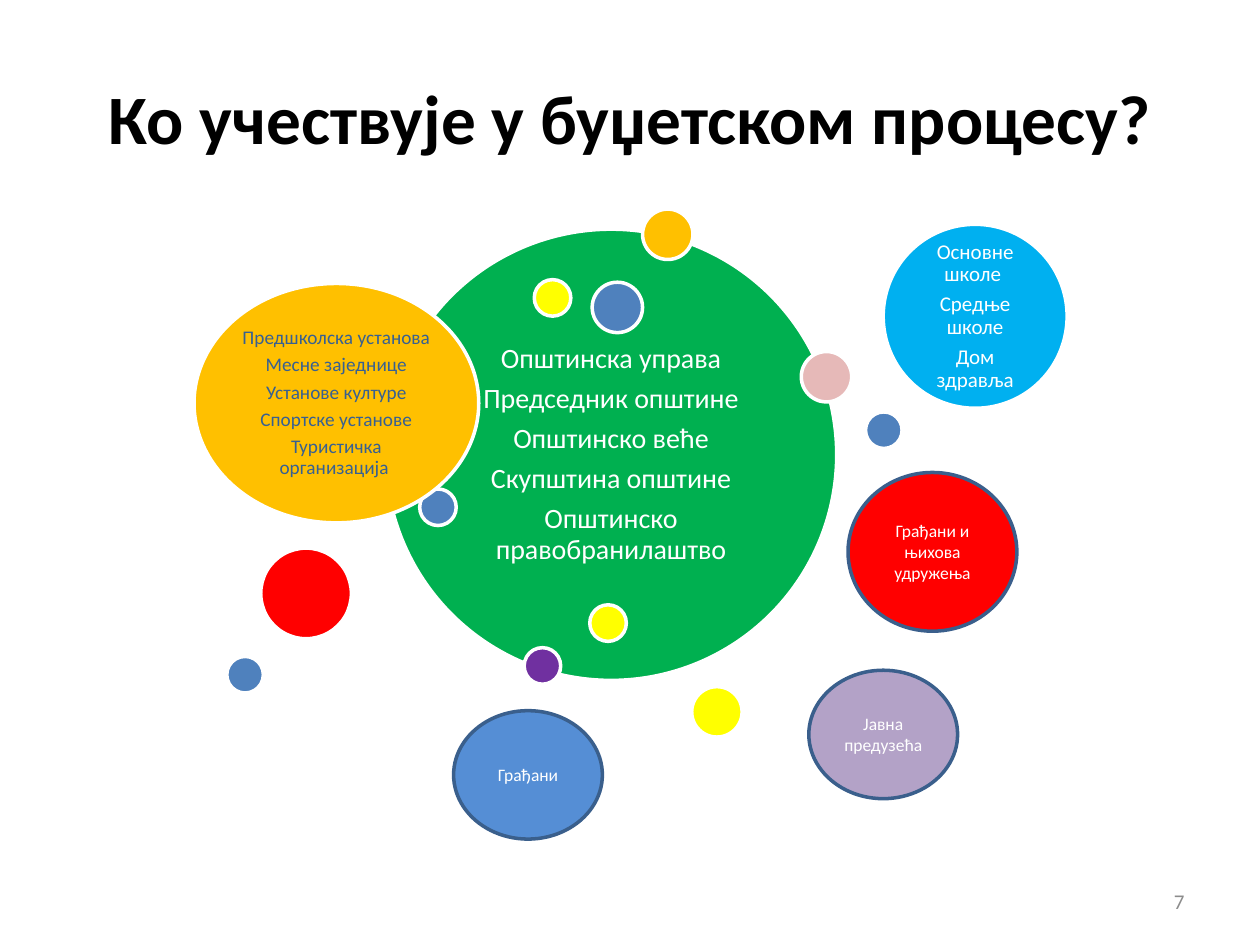
"""Build the slide showing who takes part in the municipal budget process."""
from dataclasses import dataclass

from pptx import Presentation
from pptx.dml.color import RGBColor
from pptx.enum.shapes import MSO_SHAPE
from pptx.enum.text import MSO_ANCHOR, MSO_AUTO_SIZE, PP_ALIGN
from pptx.slide import Slide
from pptx.text.text import TextFrame
from pptx.util import Pt

COLORS = {
    "black": "000000", "white": "FFFFFF", "gray": "8C8C8C",
    "green": "00B050", "orange": "FFC000", "purple": "7030A0",
    "blue": "4F81BD", "yellow": "FFFF00", "red": "FF0000",
    "sky": "00B0F0", "pink": "E6B9B8", "lilac": "B3A2C7",
    "light_blue": "558ED5", "navy": "376092", "outline": "3A5F8C",
}
SMALL, MEDIUM, LARGE = 20.9, 28.8, 51.8


@dataclass(frozen=True)
class Bubble:
    left: float
    top: float
    width: float
    height: float
    fill: str
    line: str = "white"
    lines: tuple[str, ...] = ()
    size: float = 10
    ink: str = "white"
    inset: tuple[float, float] = (7.2, 3.6)
    line_spacing: float = 1.0
    gap: float = 0


def dot(left: float, top: float, diameter: float, fill: str) -> Bubble:
    return Bubble(left, top, diameter, diameter, fill)


def group(left: float, top: float, width: float, height: float, fill: str,
          lines: tuple[str, ...], size: float, inset: float, ink: str = "white") -> Bubble:
    return Bubble(left, top, width, height, fill, "white", lines, size, ink,
                  (inset, inset), 0.9, 0.35 * size)


def outlined(left: float, top: float, width: float, height: float,
             fill: str, label: str) -> Bubble:
    return Bubble(left, top, width, height, fill, "outline", (label,))


BUBBLES = (
    group(220.3, 131, 257.8, 257.8, "green",
          ("Општинска управа", "Председник општине", "Општинско веће",
           "Скупштина општине", "Општинско правобранилаштво"), 16, 5),
    dot(367.2, 119.5, MEDIUM, "orange"),
    dot(299.5, 370.1, SMALL, "purple"),
    dot(494.6, 235.4, SMALL, "blue"),
    dot(395.3, 392.4, MEDIUM, "yellow"),
    dot(305.3, 159.8, SMALL, "yellow"),
    dot(239.8, 279.4, SMALL, "blue"),
    group(110.9, 162, 162.7, 136.8, "orange",
          ("Предшколска установа", "Месне заједнице", "Установе културе",
           "Спортске установе", "Туристичка организација "), 11, 3.6, "navy"),
    dot(338.4, 161.3, MEDIUM, "blue"),
    dot(149, 313.2, LARGE, "red"),
    group(504.7, 128.2, 105.1, 105.1, "sky",
          ("Основне школе ", "Средње школе", "Дом здравља"), 12, 3.6),
    dot(457.9, 200.9, MEDIUM, "pink"),
    dot(129.6, 375.1, SMALL, "blue"),
    dot(337, 345.6, SMALL, "yellow"),
    outlined(484.6, 270, 96.5, 90.7, "red", "Грађани и њихова удружења"),
    outlined(462.2, 383, 85, 73.4, "lilac", "Јавна предузећа"),
    outlined(259.2, 406.1, 85, 73.4, "light_blue", "Грађани"),
)


def color(name: str) -> RGBColor:
    return RGBColor.from_string(COLORS[name])


def format_text(frame: TextFrame, size: float, ink: str,
                align: PP_ALIGN = PP_ALIGN.CENTER, bold: bool = False) -> None:
    frame.word_wrap = True
    frame.auto_size = MSO_AUTO_SIZE.NONE
    frame.vertical_anchor = MSO_ANCHOR.MIDDLE
    for para in frame.paragraphs:
        para.alignment = align
        for span in para.runs:
            span.font.name = "Calibri"
            span.font.size = Pt(size)
            span.font.bold = bold
            span.font.color.rgb = color(ink)


def draw_bubble(page: Slide, bubble: Bubble) -> None:
    shape = page.shapes.add_shape(MSO_SHAPE.OVAL, Pt(bubble.left), Pt(bubble.top),
                                  Pt(bubble.width), Pt(bubble.height))
    shape.shadow.inherit = False
    shape.fill.solid()
    shape.fill.fore_color.rgb = color(bubble.fill)
    shape.line.color.rgb = color(bubble.line)
    shape.line.width = Pt(2)
    if not bubble.lines:
        return
    frame = shape.text_frame
    frame.text = "\n".join(bubble.lines)
    frame.margin_left = frame.margin_right = Pt(bubble.inset[0])
    frame.margin_top = frame.margin_bottom = Pt(bubble.inset[1])
    format_text(frame, bubble.size, bubble.ink)
    for para in frame.paragraphs:
        para.line_spacing = bubble.line_spacing
        para.space_after = Pt(bubble.gap)


def draw_title(page: Slide, text: str) -> None:
    title = page.shapes.title
    title.left, title.top, title.width, title.height = Pt(36), Pt(21.6), Pt(648), Pt(90)
    title.text_frame.text = text
    format_text(title.text_frame, 39.6, "black", bold=True)


def draw_page_number(page: Slide, number: str) -> None:
    box = page.shapes.add_textbox(Pt(516.2), Pt(500.4), Pt(167.8), Pt(28.8))
    box.text_frame.text = number
    format_text(box.text_frame, 12, "gray", PP_ALIGN.RIGHT)


def main() -> None:
    deck = Presentation()
    deck.slide_width, deck.slide_height = Pt(720), Pt(540)
    page = deck.slides.add_slide(deck.slide_layouts.get_by_name("Title Only"))
    draw_title(page, "Ко учествује у буџетском процесу?")
    draw_page_number(page, "7")
    for bubble in BUBBLES:
        draw_bubble(page, bubble)
    deck.save("out.pptx")


if __name__ == "__main__":
    main()
